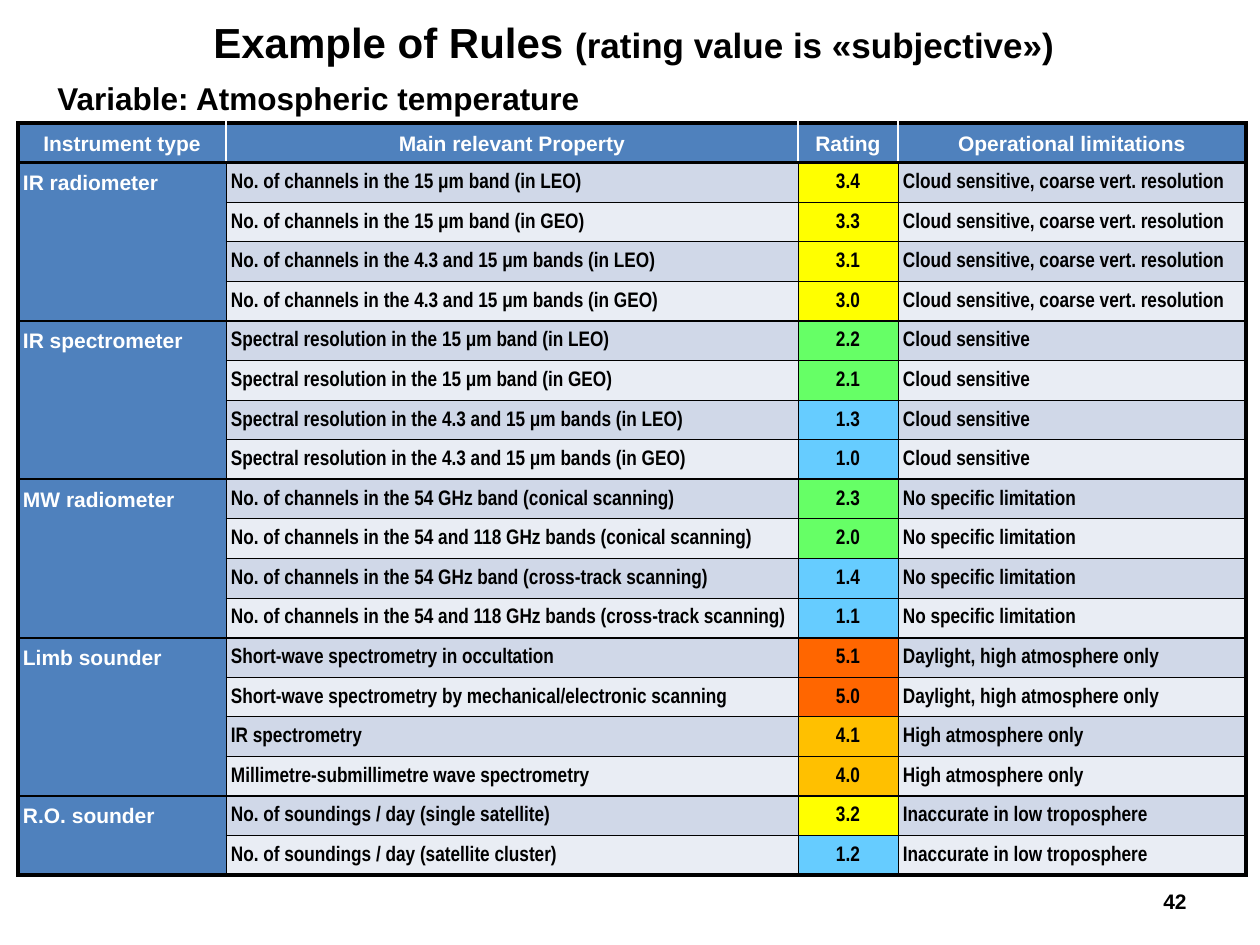
from lxml import etree
from pptx import Presentation
from pptx import util as u
from pptx.dml.color import RGBColor
from pptx.enum import text
from pptx.oxml import ns

PX = u.Inches(1) / 126
LEFT, CENTER, RIGHT = text.PP_ALIGN.LEFT, text.PP_ALIGN.CENTER, text.PP_ALIGN.RIGHT
MIDDLE = text.MSO_ANCHOR.MIDDLE
BLACK, WHITE, BLUE = "000000", "FFFFFF", "4F81BD"
BANDS = ["D0D8E8", "E9EDF4"]
RATING_FILLS = {"1": "66CCFF", "2": "66FF66", "3": "FFFF00", "4": "FFC000", "5": "FF6600"}

HEADERS = ["Instrument type", "Main relevant Property", "Rating", "Operational limitations"]
COARSE = "Cloud sensitive, coarse vert. resolution"
CLOUD = "Cloud sensitive"
NO_LIMIT = "No specific limitation"
DAYLIGHT = "Daylight, high atmosphere only"
HIGH = "High atmosphere only"
LOW = "Inaccurate in low troposphere"
INSTRUMENTS = {
    "IR radiometer": [
        ("No. of channels in the 15 μm band (in LEO)", "3.4", COARSE),
        ("No. of channels in the 15 μm band (in GEO)", "3.3", COARSE),
        ("No. of channels in the 4.3 and 15 μm bands (in LEO)", "3.1", COARSE),
        ("No. of channels in the 4.3 and 15 μm bands (in GEO)", "3.0", COARSE),
    ],
    "IR spectrometer": [
        ("Spectral resolution in the 15 μm band (in LEO)", "2.2", CLOUD),
        ("Spectral resolution in the 15 μm band (in GEO)", "2.1", CLOUD),
        ("Spectral resolution in the 4.3 and 15 μm bands (in LEO)", "1.3", CLOUD),
        ("Spectral resolution in the 4.3 and 15 μm bands (in GEO)", "1.0", CLOUD),
    ],
    "MW radiometer": [
        ("No. of channels in the 54 GHz band (conical scanning)", "2.3", NO_LIMIT),
        ("No. of channels in the 54 and 118 GHz bands (conical scanning)", "2.0", NO_LIMIT),
        ("No. of channels in the 54 GHz band (cross-track scanning)", "1.4", NO_LIMIT),
        ("No. of channels in the 54 and 118 GHz bands (cross-track scanning)", "1.1", NO_LIMIT),
    ],
    "Limb sounder": [
        ("Short-wave spectrometry in occultation", "5.1", DAYLIGHT),
        ("Short-wave spectrometry by mechanical/electronic scanning", "5.0", DAYLIGHT),
        ("IR spectrometry", "4.1", HIGH),
        ("Millimetre-submillimetre wave spectrometry", "4.0", HIGH),
    ],
    "R.O. sounder": [
        ("No. of soundings / day (single satellite)", "3.2", LOW),
        ("No. of soundings / day (satellite cluster)", "1.2", LOW),
    ],
}


def rgb(value):
    return RGBColor.from_string(value)


def add_span(para, words, size, color=BLACK, face="Arial"):
    span = para.add_run()
    span.text = words
    for name, value in {"name": face, "size": u.Pt(size), "bold": True}.items():
        setattr(span.font, name, value)
    span.font.color.rgb = rgb(color)


deck = Presentation()
deck.slide_width, deck.slide_height = u.Inches(10), u.Inches(7.5)
page = deck.slides.add_slide(deck.slide_layouts[6])

# Page number, then title and subtitle
boxes = [
    ((1128, 876, 71, 50), [(RIGHT, 0, [("42", 12)])]),
    ((45, 9, 1178, 115), [
        (CENTER, 0, [("Example of Rules ", 24), ("(rating value is «subjective»)", 20)]),
        (LEFT, 7, [("Variable: Atmospheric temperature", 18)]),
    ]),
]
for place, lines in boxes:
    frame = page.shapes.add_textbox(*[round(v * PX) for v in place]).text_frame
    frame.word_wrap = True
    frame.vertical_anchor = MIDDLE
    for i, (align, gap, spans) in enumerate(lines):
        para = frame.add_paragraph() if i else frame.paragraphs[0]
        para.alignment = align
        if gap:
            para.space_before = u.Pt(gap)
        for words, size in spans:
            add_span(para, words, size)

# Rows of the rating table; an instrument is named on its first row only
rows = [HEADERS]
group_starts = []
for instrument, properties in INSTRUMENTS.items():
    group_starts.append(len(rows))
    for i, entry in enumerate(properties):
        rows.append(["" if i else instrument, *entry])

widths = [208, 572, 100, 348]
row_height = round(753 * PX / len(rows))
table = page.shapes.add_table(
    len(rows), len(widths), round(18 * PX), round(123 * PX),
    round(sum(widths) * PX), row_height * len(rows)).table
table.horz_banding = False
for column, width in zip(table.columns, widths):
    column.width = round(width * PX)

for r, row in enumerate(rows):
    table.rows[r].height = row_height
    for c, words in enumerate(row):
        cell = table.cell(r, c)
        cell_format = {
            "vertical_anchor": MIDDLE, "margin_top": 0, "margin_bottom": 0,
            "margin_left": round(5 * PX), "margin_right": round(5 * PX),
        }
        for name, value in cell_format.items():
            setattr(cell, name, value)

        # Outer frame, group rules, thin inner lines, white header dividers
        sides = {}
        for side, edge in (("lnL", c), ("lnR", c + 1)):
            if edge in (0, len(widths)):
                sides[side] = (BLACK, 2.25)
            else:
                sides[side] = (BLACK, 0.5) if r else (WHITE, 1)
        for side, edge in (("lnT", r), ("lnB", r + 1)):
            if edge in (0, len(rows)):
                sides[side] = (BLACK, 2.25)
            elif edge in group_starts:
                sides[side] = (BLACK, 1.5)
            else:
                sides[side] = (BLACK, 0.5) if c else None
        properties = cell._tc.get_or_add_tcPr()
        for side, style in sides.items():
            line = etree.SubElement(properties, ns.qn("a:" + side))
            if style is None:
                etree.SubElement(line, ns.qn("a:noFill"))
                continue
            color, weight = style
            line.set("w", str(u.Pt(weight)))
            fill = etree.SubElement(line, ns.qn("a:solidFill"))
            etree.SubElement(fill, ns.qn("a:srgbClr"), val=color)

        labelled = r == 0 or c == 0
        if labelled:
            cell_fill = BLUE
        elif c == 2:
            cell_fill = RATING_FILLS[words[0]]
        else:
            cell_fill = BANDS[(r - 1) % 2]
        cell.fill.solid()
        cell.fill.fore_color.rgb = rgb(cell_fill)

        if words:
            para = cell.text_frame.paragraphs[0]
            para.alignment = CENTER if r == 0 or c == 2 else LEFT
            para.line_spacing = 1.07
            add_span(para, words, 12, WHITE if labelled else BLACK,
                     "Arial" if labelled else "Arial Narrow")

deck.save("out.pptx")
